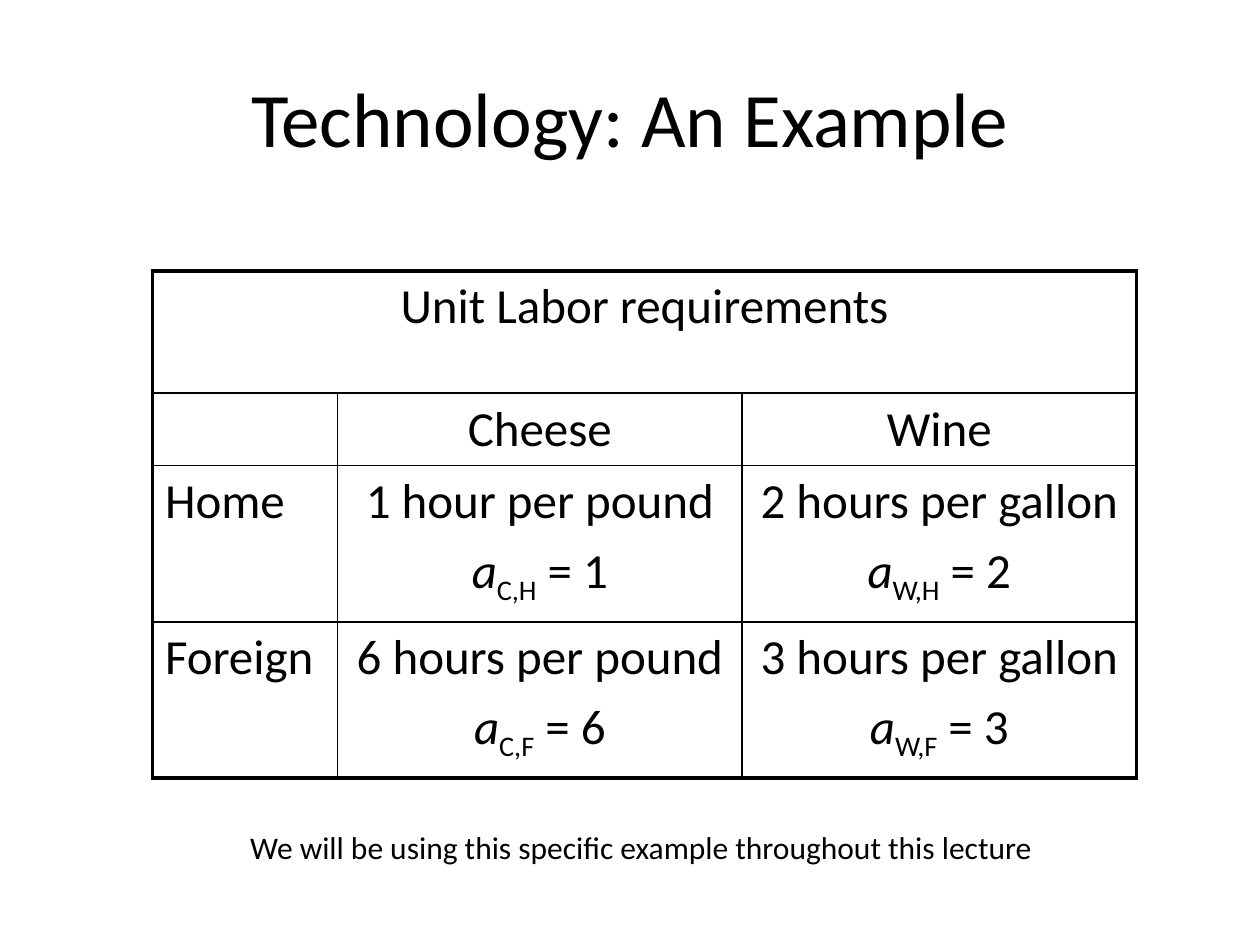
from lxml.etree import SubElement
from pptx import Presentation
from pptx.dml.color import RGBColor
from pptx.enum.text import MSO_ANCHOR, PP_ALIGN
from pptx.oxml import parse_xml
from pptx.oxml.ns import nsdecls, qn
from pptx.util import Inches, Pt

COLORS = {"ink": "000000", "paper": "FFFFFF"}
FONT = "Calibri"
TITLE = "Technology: An Example"
NOTE = "We will be using this specific example throughout this lecture"
HEADING = "Unit Labor requirements"
GOODS = ["Cheese", "Wine"]
# Country, then (hours, subscript, value) for each good
COUNTRIES = [
    ("Home", [("1 hour per pound", "C,H", 1), ("2 hours per gallon", "W,H", 2)]),
    ("Foreign", [("6 hours per pound", "C,F", 6), ("3 hours per gallon", "W,F", 3)]),
]
COLUMN_WIDTHS = [1.47, 3.21, 3.13]
ROW_HEIGHTS = [0.97, 0.57, 1.24, 1.24]
OUTER_LINE, INNER_LINE = 2.25, 1


def add_span(para, text, size, italic=False, subscript=False):
    span = para.add_run()
    span.text = text
    span.font.name = FONT
    span.font.size = Pt(size)
    span.font.italic = italic
    span.font.color.rgb = RGBColor.from_string(COLORS["ink"])
    if subscript:
        span.font._element.set("baseline", "-25000")


def space_before(para, percent):
    """Set spacing before a paragraph relative to its text size."""
    spacing = SubElement(para._p.get_or_add_pPr(), qn("a:spcBef"))
    SubElement(spacing, qn("a:spcPct")).set("val", str(percent * 1000))


def fill_cell(cell, lines, align):
    """Write lines, each a list of (text, italic, subscript) spans."""
    for index, spans in enumerate(lines):
        frame = cell.text_frame
        para = frame.add_paragraph() if index else frame.paragraphs[0]
        para.alignment = align
        space_before(para, 20)
        for text, italic, subscript in spans:
            add_span(para, text, 28, italic, subscript)


def set_borders(cell, outer_sides):
    properties = cell._tc.get_or_add_tcPr()
    for index, side in enumerate("LRTB"):
        width = Pt(OUTER_LINE if side in outer_sides else INNER_LINE)
        properties.insert(index, parse_xml(
            f'<a:ln{side} {nsdecls("a")} w="{int(width)}"><a:solidFill>'
            f'<a:srgbClr val="{COLORS["ink"]}"/></a:solidFill></a:ln{side}>'))


def plain(text):
    return [(text, False, False)]


def add_labor_table(page):
    row_count, column_count = len(ROW_HEIGHTS), len(COLUMN_WIDTHS)
    table = page.shapes.add_table(
        row_count, column_count, Inches(1.21), Inches(2.15),
        Inches(sum(COLUMN_WIDTHS)), Inches(sum(ROW_HEIGHTS))).table
    table.first_row = table.horz_banding = False
    for column, width in zip(table.columns, COLUMN_WIDTHS):
        column.width = Inches(width)
    for row, height in zip(table.rows, ROW_HEIGHTS):
        row.height = Inches(height)
    table.cell(0, 0).merge(table.cell(0, column_count - 1))

    fill_cell(table.cell(0, 0), [plain(HEADING)], PP_ALIGN.CENTER)
    for column, good in enumerate(GOODS, 1):
        fill_cell(table.cell(1, column), [plain(good)], PP_ALIGN.CENTER)
    for row, (country, requirements) in enumerate(COUNTRIES, 2):
        fill_cell(table.cell(row, 0), [plain(country)], PP_ALIGN.LEFT)
        for column, (hours, subscript, value) in enumerate(requirements, 1):
            formula = [("a", True, False), (subscript, False, True),
                       (f" = {value}", False, False)]
            fill_cell(table.cell(row, column), [plain(hours), formula],
                      PP_ALIGN.CENTER)

    for row in range(row_count):
        for column in range(column_count):
            cell = table.cell(row, column)
            cell.fill.background()
            last = column + (cell.span_width if cell.is_merge_origin else 1)
            edges = {"L": column == 0, "R": last == column_count,
                     "T": row == 0, "B": row == row_count - 1}
            set_borders(cell, [side for side, outer in edges.items() if outer])


def main():
    deck = Presentation()
    deck.slide_width, deck.slide_height = Inches(10), Inches(7.5)
    page = deck.slides.add_slide(deck.slide_layouts[5])
    page.background.fill.solid()
    page.background.fill.fore_color.rgb = RGBColor.from_string(COLORS["paper"])

    title = page.shapes.title
    title.left, title.top = Inches(0.5), Inches(0.3)
    title.width, title.height = Inches(9), Inches(1.25)
    title.text_frame.vertical_anchor = MSO_ANCHOR.MIDDLE
    para = title.text_frame.paragraphs[0]
    para.alignment = PP_ALIGN.CENTER
    add_span(para, TITLE, 44)

    add_labor_table(page)

    note = page.shapes.add_textbox(Inches(0.89), Inches(6.52), Inches(8.4), Inches(0.4))
    note.text_frame.word_wrap = True
    para = note.text_frame.paragraphs[0]
    para.alignment = PP_ALIGN.CENTER
    add_span(para, NOTE, 18)

    deck.save("out.pptx")


if __name__ == "__main__":
    main()
